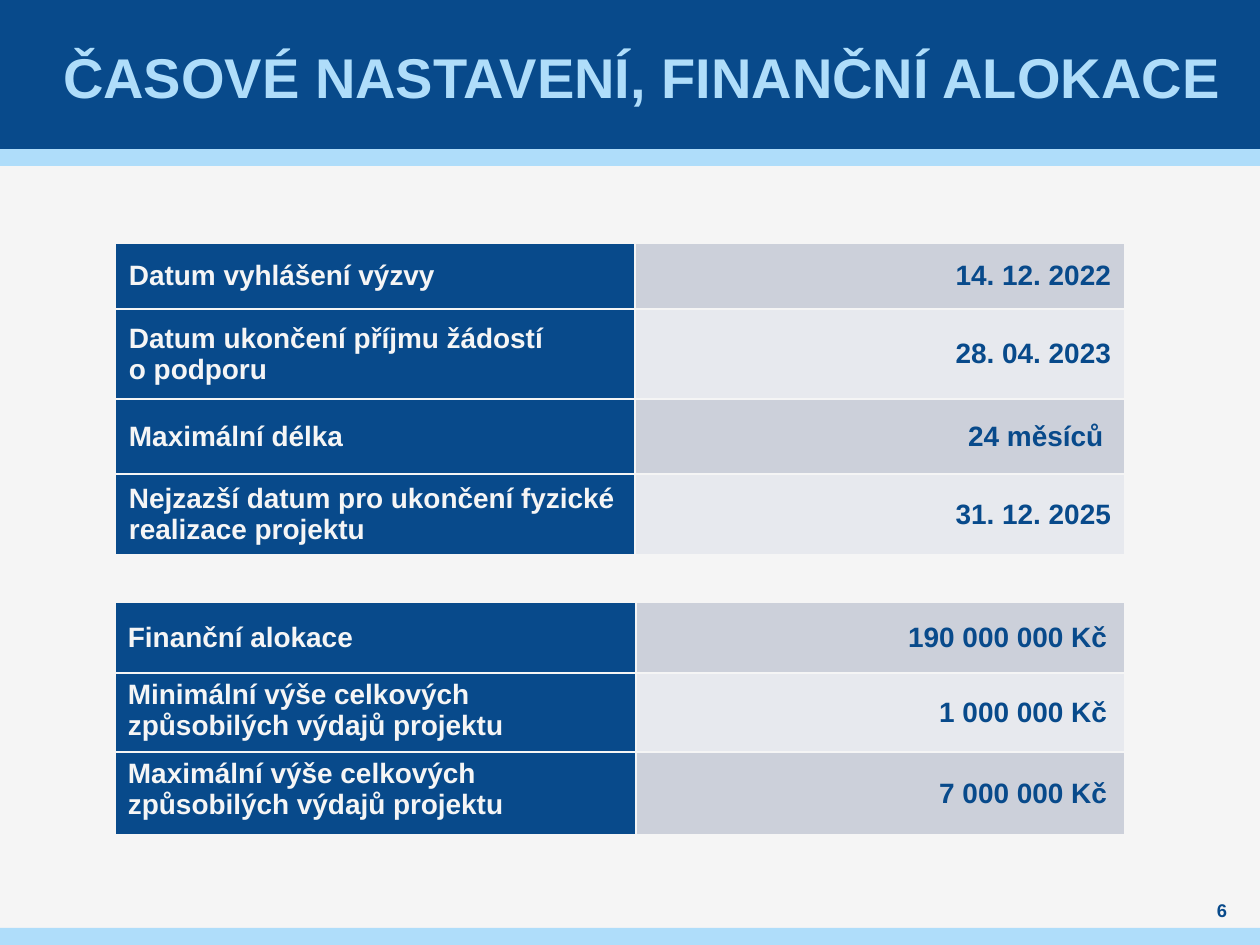
"""Build the slide on the call's timetable and financial allocation."""
from lxml.etree import SubElement
from pptx import Presentation
from pptx.dml.color import RGBColor
from pptx.enum.shapes import MSO_SHAPE as Shape
from pptx.enum.text import MSO_ANCHOR as Anchor, PP_ALIGN as Align
from pptx.oxml.ns import qn
from pptx.util import Pt

PX = 914400 / 126
NAVY = RGBColor(0x08, 0x4A, 0x8B)
SKY = RGBColor(0xAF, 0xDD, 0xFA)
PAPER = RGBColor(0xF5, 0xF5, 0xF5)
GREY = RGBColor(0xCC, 0xD0, 0xDA)
PALE = RGBColor(0xE7, 0xE9, 0xEE)


def px(*lengths):
    return [round(length * PX) for length in lengths]


def write(frame, text, size, color, align):
    para = frame.paragraphs[0]
    para.alignment = align
    for number, line in enumerate(text.split("\n")):
        if number:
            para.add_line_break()
        span = para.add_run()
        span.text = line
        span.font.name = "Arial"
        span.font.size = Pt(size)
        span.font.bold = True
        span.font.color.rgb = color
    return para


deck = Presentation()
deck.slide_width, deck.slide_height = px(1260, 945)
page = deck.slides.add_slide(deck.slide_layouts[5])
page.background.fill.solid()
page.background.fill.fore_color.rgb = PAPER

bands = [(149, 17, SKY), (0, 149, NAVY), (928, 17, SKY)]
for top, height, color in bands:
    band = page.shapes.add_shape(Shape.RECTANGLE, *px(0, top, 1260, height))
    band.shadow.inherit = False
    band.fill.solid()
    band.fill.fore_color.rgb = color
    band.line.fill.background()

title = page.shapes.title
page.shapes._spTree.append(title._element)
title.left, title.top, title.width, title.height = px(49, 2, 1186, 149)
number_box = page.shapes.add_textbox(*px(1190, 898, 64, 25))
labels = [
    (title, "ČASOVÉ NASTAVENÍ, FINANČNÍ ALOKACE", 32, SKY, 5),
    (number_box, "6", 10.5, NAVY, 0),
]
for box, text, size, color, side in labels:
    frame = box.text_frame
    frame.word_wrap = True
    frame.vertical_anchor = Anchor.MIDDLE
    frame.margin_left, frame.margin_right = px(side, side)
    frame.margin_top = frame.margin_bottom = 0
    write(frame, text, size, color, Align.CENTER)

dates = [
    (66, "Datum vyhlášení výzvy", "14. 12. 2022", Anchor.MIDDLE),
    (90, "Datum ukončení příjmu žádostí \no podporu", "28. 04. 2023", Anchor.MIDDLE),
    (75, "Maximální délka", "24 měsíců ", Anchor.MIDDLE),
    (81, "Nejzazší datum pro ukončení fyzické realizace projektu", "31. 12. 2025", Anchor.MIDDLE),
]
money = [
    (71, "Finanční alokace", "190 000 000 Kč", Anchor.MIDDLE),
    (75, "Minimální výše celkových způsobilých výdajů projektu", "1 000 000 Kč", Anchor.TOP),
    (83, "Maximální výše celkových způsobilých výdajů projektu", "7 000 000 Kč", Anchor.TOP),
]
tables = [(243, 520, dates, 9, 0, True), (602, 521, money, 13, 6, False)]
for top, split, rows, side, edge, indent_label in tables:
    height = sum(row[0] for row in rows)
    holder = page.shapes.add_table(len(rows), 2, *px(115, top, 1010, height))
    table = holder.table
    table.first_row = table.horz_banding = False
    table.columns[0].width, table.columns[1].width = px(split, 1010 - split)
    for index, (row_height, label, value, label_anchor) in enumerate(rows):
        table.rows[index].height = px(row_height)[0]
        shade = PALE if index % 2 else GREY
        entries = [
            (label, NAVY, PAPER, Align.LEFT, label_anchor, indent_label),
            (value, shade, NAVY, Align.RIGHT, Anchor.MIDDLE, True),
        ]
        for column, (text, back, color, align, anchor, indent) in enumerate(entries):
            cell = table.cell(index, column)
            cell.margin_left, cell.margin_right = px(side, side)
            cell.margin_top, cell.margin_bottom = px(edge, edge)
            cell.vertical_anchor = anchor
            props = cell._tc.get_or_add_tcPr()
            for tag in ("a:lnL", "a:lnR", "a:lnT", "a:lnB"):
                border = SubElement(props, qn(tag), w=str(Pt(1)))
                solid = SubElement(border, qn("a:solidFill"))
                SubElement(solid, qn("a:srgbClr"), val=str(PAPER))
            cell.fill.solid()
            cell.fill.fore_color.rgb = back
            para = write(cell.text_frame, text, 16, color, align)
            if indent:
                para.space_before = para.space_after = Pt(3)
                para_props = para._p.get_or_add_pPr()
                para_props.set("marL", str(px(5)[0]))
                para_props.set("marR", str(px(5)[0]))

deck.save("out.pptx")
